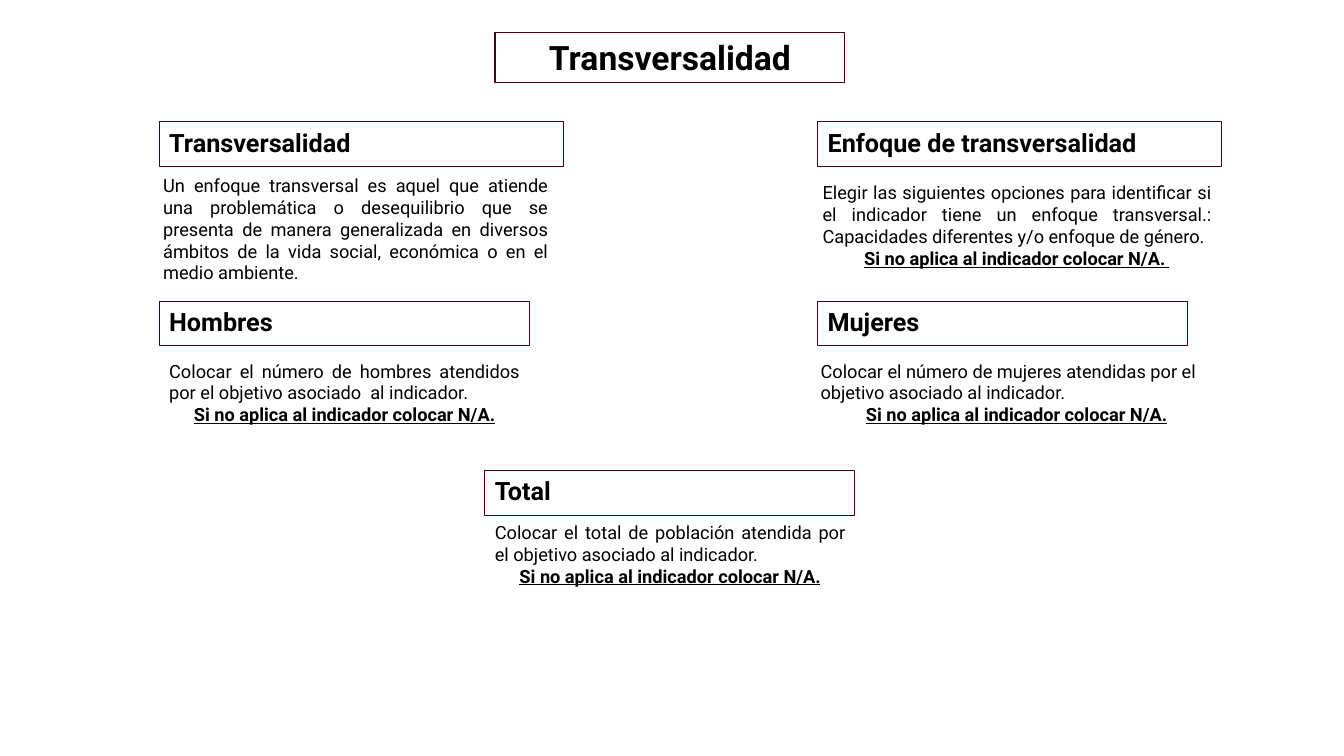
from dataclasses import dataclass
from pptx import Presentation
from pptx.dml.color import RGBColor as RGB
from pptx.enum.shapes import MSO_SHAPE as Shape
from pptx.enum.text import MSO_ANCHOR as Anchor, MSO_AUTO_SIZE as AutoSize, PP_ALIGN as Align
from pptx.util import Inches, Pt


@dataclass(frozen=True)
class Theme:
    font: str = "Roboto"
    ink: RGB = RGB(0, 0, 0)
    border: RGB = RGB(0x4A, 0x00, 0x1F)
    border_width: float = 0.75
    title: int = 24
    heading: int = 18
    body: int = 13


THEME = Theme()
SLIDE_W, SLIDE_H = 13.33, 7.5
COLS = {"left": 1.58, "center": 4.81, "right": 8.11}
ROWS = (1.21, 2.99, 4.67)
WIDE, NARROW = 4.01, 3.67
HEADING_H, BODY_H = 0.44, 0.98
NOTE = "Si no aplica al indicador colocar N/A."

SECTIONS = [
    dict(col="left", row=0, width=WIDE, heading="Transversalidad",
         body="Un enfoque transversal es aquel que atiende una problemática o desequilibrio "
              "que se presenta de manera generalizada en diversos ámbitos de la vida social, "
              "económica o en el medio ambiente.",
         shift=-0.06, drop=0.47),
    dict(col="right", row=0, width=WIDE, heading="Enfoque de transversalidad",
         body="Elegir las siguientes opciones para identificar si el indicador tiene un "
              "enfoque transversal.: Capacidades diferentes y/o enfoque de género. ",
         note=NOTE + " ", shift=-0.05, drop=0.54, body_width=4.05),
    dict(col="left", row=1, width=NARROW, heading="Hombres",
         body="Colocar el número de hombres atendidos por el objetivo asociado  al indicador.",
         note=NOTE, drop=0.53),
    dict(col="right", row=1, width=NARROW, heading="Mujeres",
         body="Colocar el número de mujeres atendidas por el objetivo asociado al indicador.",
         note=NOTE, shift=-0.07, drop=0.53, body_width=4.08, align=Align.LEFT),
    dict(col="center", row=2, width=NARROW, heading="Total",
         body="Colocar el total de población atendida por el objetivo asociado al indicador.",
         note=NOTE, drop=0.45),
]


def add_text(tf, text, size, first=True, align=Align.LEFT, bold=False, underline=None):
    p = tf.paragraphs[0] if first else tf.add_paragraph()
    p.alignment = align
    r = p.add_run()
    r.text = text
    font = r.font
    font.name, font.size, font.bold = THEME.font, Pt(size), bold
    font.underline = underline
    font.color.rgb = THEME.ink


def prepare_frame(sp):
    tf = sp.text_frame
    tf.word_wrap = True
    tf.auto_size = AutoSize.SHAPE_TO_FIT_TEXT
    tf.vertical_anchor = Anchor.TOP
    return tf


def add_frame(s, box, text, size, align=Align.LEFT):
    sp = s.shapes.add_shape(Shape.RECTANGLE, *map(Inches, box))
    sp.shadow.inherit = False
    sp.fill.background()
    sp.line.color.rgb = THEME.border
    sp.line.width = Pt(THEME.border_width)
    add_text(prepare_frame(sp), text, size, align=align, bold=True)


def add_section(s, box, heading, body, note=None, shift=0, drop=0.5,
                body_width=None, align=Align.JUSTIFY):
    left, top, width, height = box
    add_frame(s, box, heading, THEME.heading)
    body_box = (left + shift, top + drop, body_width or width, BODY_H)
    tf = prepare_frame(s.shapes.add_textbox(*map(Inches, body_box)))
    add_text(tf, body, THEME.body, align=align)
    if note:
        add_text(tf, note, THEME.body, first=False, align=Align.CENTER,
                 bold=True, underline=True)


def main():
    prs = Presentation()
    prs.slide_width, prs.slide_height = Inches(SLIDE_W), Inches(SLIDE_H)
    s = prs.slides.add_slide(prs.slide_layouts[6])
    add_frame(s, (4.91, 0.32, 3.47, 0.5), "Transversalidad", THEME.title, Align.CENTER)
    for section in SECTIONS:
        content = dict(section)
        box = (COLS[content.pop("col")], ROWS[content.pop("row")],
               content.pop("width"), HEADING_H)
        add_section(s, box, **content)
    prs.save("out.pptx")


if __name__ == "__main__":
    main()
